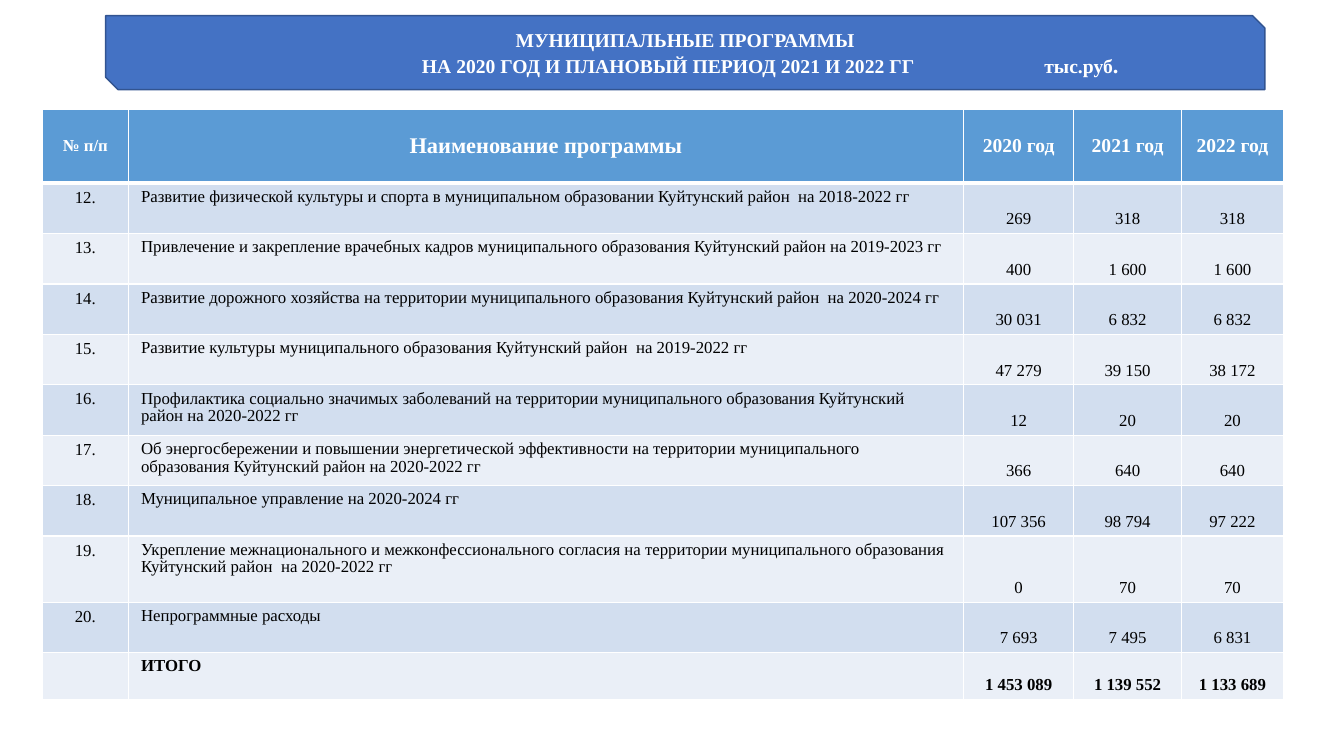
from dataclasses import dataclass

import pptx
import pptx.dml.color
import pptx.enum.shapes
import pptx.enum.text
import pptx.oxml.ns
import pptx.util
from lxml import etree

Pt = pptx.util.Pt
ALIGN = pptx.enum.text.PP_ALIGN
ANCHOR = pptx.enum.text.MSO_ANCHOR
qn = pptx.oxml.ns.qn


@dataclass(frozen=True)
class Theme:
    font: str = "Times New Roman"
    banner: str = "4472C4"
    banner_line: str = "325491"
    header: str = "5B9BD5"
    bands: tuple = ("D2DEEF", "EAEFF7")
    light: str = "FFFFFF"
    dark: str = "000000"
    body: int = 12
    title: int = 14
    unit: int = 16
    name_header: int = 16


class Deck:
    """Draws styled elements on the current slide."""

    def __init__(self, prs, theme):
        self.theme = theme
        self.s = prs.slides.add_slide(prs.slide_layouts[6])

    def color(self, value):
        return pptx.dml.color.RGBColor.from_string(value)

    def run(self, p, text, size, color, bold=False):
        r = p.add_run()
        r.text = text
        r.font.name = self.theme.font
        r.font.size = Pt(size)
        r.font.bold = bold
        r.font.color.rgb = self.color(color)

    def tabs(self, p, stops):
        tab_list = etree.SubElement(p._p.get_or_add_pPr(), qn("a:tabLst"))
        for position, align in stops:
            etree.SubElement(tab_list, qn("a:tab"), pos=str(Pt(position)), algn=align)

    def banner(self, left, top, width, height, title, subtitle, unit, stops):
        t = self.theme
        shape_type = pptx.enum.shapes.MSO_SHAPE.SNIP_2_DIAG_RECTANGLE
        sp = self.s.shapes.add_shape(shape_type, Pt(left), Pt(top), Pt(width), Pt(height))
        sp.shadow.inherit = False
        sp.fill.solid()
        sp.fill.fore_color.rgb = self.color(t.banner)
        sp.line.color.rgb = self.color(t.banner_line)
        sp.line.width = Pt(1)
        tf = sp.text_frame
        tf.word_wrap = True
        tf.vertical_anchor = ANCHOR.MIDDLE
        p = tf.paragraphs[0]
        p.alignment = ALIGN.CENTER
        self.run(p, title, t.title, t.light, True)
        p = tf.add_paragraph()
        p.alignment = ALIGN.LEFT
        self.tabs(p, stops)
        self.run(p, f"\t{subtitle}\t{unit}", t.title, t.light, True)
        self.run(p, ".", t.unit, t.light, True)

    def borders(self, cell, bottom):
        tc_pr = cell._tc.get_or_add_tcPr()
        for side, width in (("L", 1), ("R", 1), ("T", 1), ("B", bottom)):
            ln = etree.SubElement(tc_pr, qn(f"a:ln{side}"), w=str(Pt(width)))
            fill = etree.SubElement(ln, qn("a:solidFill"))
            etree.SubElement(fill, qn("a:srgbClr"), val=self.theme.light)

    def cell(self, cell, text, fill, size, color, bold, align, anchor, bottom=1, spacing=None):
        self.borders(cell, bottom)
        cell.fill.solid()
        cell.fill.fore_color.rgb = self.color(fill)
        cell.margin_left = cell.margin_right = Pt(9.2)
        cell.margin_top = cell.margin_bottom = Pt(3.6)
        cell.vertical_anchor = anchor
        p = cell.text_frame.paragraphs[0]
        p.alignment = align
        p.line_spacing = spacing
        if text:
            self.run(p, text, size, color, bold)

    def table(self, left, top, widths, heights, header, rows):
        t = self.theme
        frame = self.s.shapes.add_table(len(heights), len(widths), Pt(left), Pt(top),
                                        Pt(sum(widths)), Pt(sum(heights)))
        table = frame.table
        table.first_row = table.horz_banding = False
        for column, width in zip(table.columns, widths):
            column.width = Pt(width)
        for row, height in zip(table.rows, heights):
            row.height = Pt(height)
        for j, (text, size) in enumerate(header):
            self.cell(table.cell(0, j), text, t.header, size, t.light, True,
                      ALIGN.CENTER, ANCHOR.MIDDLE, bottom=3)
        for i, values in enumerate(rows, 1):
            for j, text in enumerate(values):
                self.cell(table.cell(i, j), text, t.bands[(i - 1) % 2], t.body, t.dark,
                          i == len(rows), ALIGN.LEFT if j == 1 else ALIGN.CENTER,
                          ANCHOR.TOP if j < 2 else ANCHOR.BOTTOM,
                          spacing=0.95 if j == 1 else None)


PROGRAMS = [
    ("Развитие физической культуры и спорта в муниципальном образовании Куйтунский район  на 2018-2022 гг",
     "269", "318", "318"),
    ("Привлечение и закрепление врачебных кадров муниципального образования Куйтунский район на 2019-2023 гг",
     "400", "1 600", "1 600"),
    ("Развитие дорожного хозяйства на территории муниципального образования Куйтунский район  на 2020-2024 гг",
     "30 031", "6 832", "6 832"),
    ("Развитие культуры муниципального образования Куйтунский район  на 2019-2022 гг",
     "47 279", "39 150", "38 172"),
    ("Профилактика социально значимых заболеваний на территории муниципального образования "
     "Куйтунский район на 2020-2022 гг", "12", "20", "20"),
    ("Об энергосбережении и повышении энергетической эффективности на территории муниципального "
     "образования Куйтунский район на 2020-2022 гг", "366", "640", "640"),
    ("Муниципальное управление на 2020-2024 гг", "107 356", "98 794", "97 222"),
    ("Укрепление межнационального и межконфессионального согласия на территории муниципального "
     "образования Куйтунский район  на 2020-2022 гг", "0", "70", "70"),
    ("Непрограммные расходы", "7 693", "7 495", "6 831"),
]
TOTAL = ("", "ИТОГО", "1 453 089", "1 139 552", "1 133 689")


def main():
    prs = pptx.Presentation()
    prs.slide_width, prs.slide_height = Pt(960), Pt(540)
    theme = Theme()
    deck = Deck(prs, theme)
    deck.banner(75.5, 11.2, 828, 52.8, "МУНИЦИПАЛЬНЫЕ ПРОГРАММЫ",
                "НА 2020 ГОД И ПЛАНОВЫЙ ПЕРИОД 2021 И 2022 ГГ", "тыс.руб",
                [(390.5, "ctr"), (659, "l")])
    header = [("№ п/п", theme.body), ("Наименование программы", theme.name_header)]
    header += [(f"{year} год", theme.title) for year in (2020, 2021, 2022)]
    rows = [(f"{n}.", *program) for n, program in enumerate(PROGRAMS, 12)] + [TOTAL]
    deck.table(30.4, 78.1, [61.2, 596.8, 78.6, 77, 72.8],
               [52.8] + [36] * 7 + [47.2, 36, 33.4], header, rows)
    prs.save("out.pptx")


if __name__ == "__main__":
    main()
